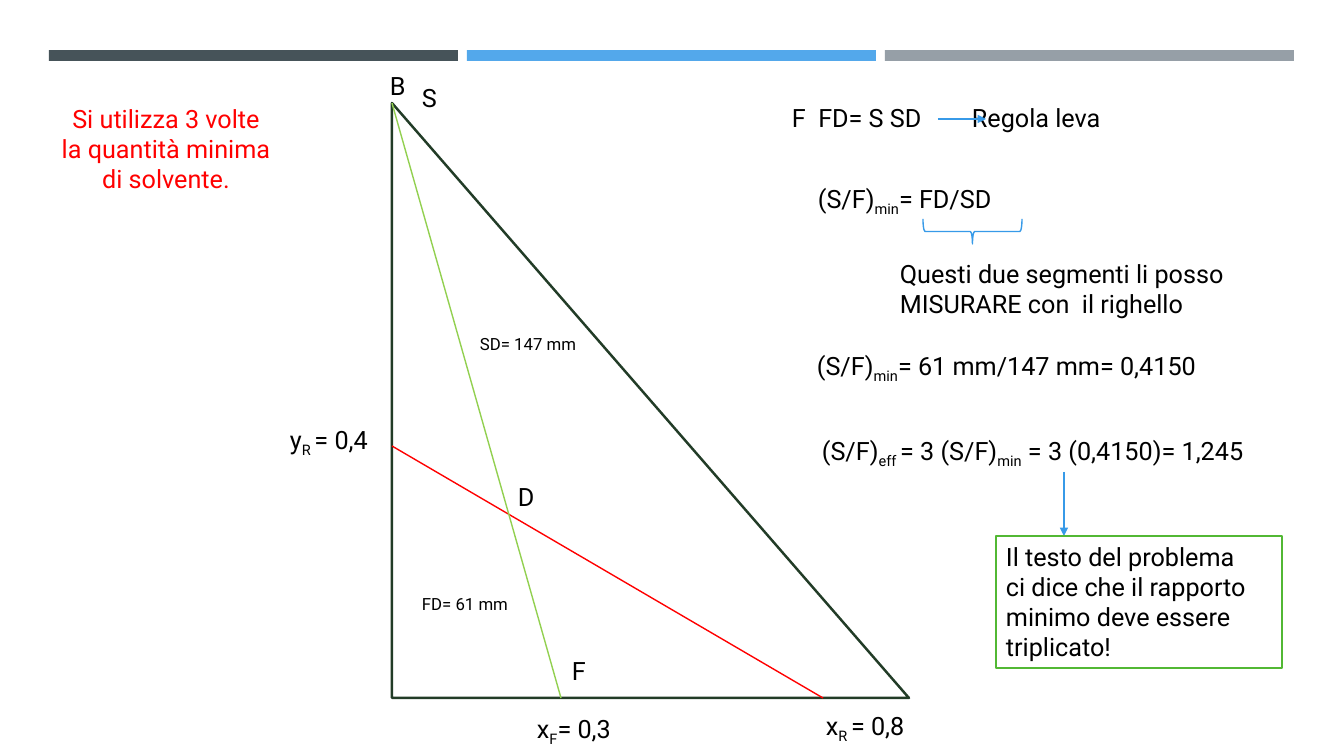
from dataclasses import dataclass

from lxml.etree import SubElement
from pptx import Presentation
from pptx.dml.color import RGBColor
from pptx.enum.shapes import MSO_CONNECTOR, MSO_SHAPE
from pptx.enum.text import MSO_ANCHOR, MSO_AUTO_SIZE, PP_ALIGN
from pptx.oxml.ns import qn
from pptx.util import Pt

SLIDE_WIDTH, SLIDE_HEIGHT = 1344, 756
EMU_PER_PX = 12192000 / SLIDE_WIDTH


@dataclass(frozen=True)
class Theme:
    font: str = "Roboto"
    text_size: int = 18
    small_size: int = 12
    thin: float = 1
    thick: float = 1.75
    black: str = "000000"
    white: str = "FFFFFF"
    red: str = "FF0000"
    blue: str = "379AE8"
    lime: str = "92D050"
    green: str = "52B834"
    dark_green: str = "223C27"
    bars: tuple = ("465359", "53A8EB", "969FA7")


def px(*lengths):
    return [round(length * EMU_PER_PX) for length in lengths]


def write(frame, text, *, font, size, color, align=PP_ALIGN.LEFT, wrap=False, tab=None):
    """Fill a frame line by line; text between a pair of ~ becomes subscript."""
    frame.word_wrap = wrap
    frame.auto_size = MSO_AUTO_SIZE.NONE
    frame.vertical_anchor = MSO_ANCHOR.TOP
    for number, line in enumerate(text.split("\n")):
        paragraph = frame.add_paragraph() if number else frame.paragraphs[0]
        paragraph.alignment = align
        if tab:
            stops = SubElement(paragraph._p.get_or_add_pPr(), qn("a:tabLst"))
            SubElement(stops, qn("a:tab"), pos=str(px(tab)[0]), algn="l")
        for part, words in enumerate(line.split("~")):
            run = paragraph.add_run()
            run.text = words
            run.font.name = font
            run.font.size = Pt(size)
            run.font.color.rgb = RGBColor.from_string(color)
            if part % 2:
                run._r.get_or_add_rPr().set("baseline", "-25000")


class Sheet:
    def __init__(self, slide, theme):
        self.slide = slide
        self.theme = theme

    def title(self, text, box, color):
        heading = self.slide.shapes.title
        heading.left, heading.top, heading.width, heading.height = px(*box)
        write(heading.text_frame, text, font=self.theme.font, size=self.theme.text_size,
              color=color, align=PP_ALIGN.CENTER, wrap=True)

    def label(self, text, box, size=None, tab=None):
        area = self.slide.shapes.add_textbox(*px(*box))
        write(area.text_frame, text, font=self.theme.font,
              size=size or self.theme.text_size, color=self.theme.black, tab=tab)

    def shape(self, kind, box, fill=None, line=None, width=1, rotation=0, text=None):
        figure = self.slide.shapes.add_shape(kind, *px(*box))
        figure.shadow.inherit = False
        figure.rotation = rotation
        if fill:
            figure.fill.solid()
            figure.fill.fore_color.rgb = RGBColor.from_string(fill)
        else:
            figure.fill.background()
        if line:
            figure.line.color.rgb = RGBColor.from_string(line)
            figure.line.width = Pt(width)
        else:
            figure.line.fill.background()
        if text:
            write(figure.text_frame, text, font=self.theme.font,
                  size=self.theme.text_size, color=self.theme.black, wrap=True)

    def line(self, start, end, color, arrow=False):
        segment = self.slide.shapes.add_connector(
            MSO_CONNECTOR.STRAIGHT, *px(*start, *end))
        segment.line.color.rgb = RGBColor.from_string(color)
        segment.line.width = Pt(self.theme.thin)
        properties = segment._element.spPr
        if arrow:
            SubElement(properties.find(qn("a:ln")), qn("a:tailEnd"), type="triangle")
        SubElement(properties, qn("a:effectLst"))


def main():
    deck = Presentation()
    deck.slide_width, deck.slide_height = px(SLIDE_WIDTH, SLIDE_HEIGHT)
    theme = Theme()
    sheet = Sheet(deck.slides.add_slide(deck.slide_layouts[5]), theme)

    # Bars across the top
    for column, color in enumerate(theme.bars):
        sheet.shape(MSO_SHAPE.RECTANGLE, (49 + 418 * column, 50, 409, 11), fill=color)

    # Statement
    sheet.title("Si utilizza 3 volte\nla quantità minima\ndi solvente.",
                (40, 98, 252, 102), theme.red)

    # Triangular diagram with its two segments
    left, top, right, bottom = 392, 103, 909, 698
    sheet.shape(MSO_SHAPE.RIGHT_TRIANGLE, (left, top, right - left, bottom - top),
                line=theme.dark_green, width=theme.thick)
    sheet.line((left, 446), (823, bottom), theme.red)
    sheet.line((left, top), (561, bottom), theme.lime)

    # Points, coordinates and formulas
    for text, x, y, width in (
        ("B", 380, 65, 37),
        ("S", 412, 77, 37),
        ("D", 508, 476, 38),
        ("F", 562, 650, 34),
        ("y~R ~= 0,4", 280, 419, 108),
        ("x~F~= 0,3", 527, 708, 101),
        ("x~R ~= 0,8", 816, 705, 106),
        ("(S/F)~min~= FD/SD", 808, 178, 211),
        ("(S/F)~min~= 61 mm/147 mm= 0,4150", 807, 345, 423),
        ("(S/F)~eff ~= 3 (S/F)~min~ = 3 (0,4150)= 1,245", 812, 430, 468),
    ):
        sheet.label(text, (x, y, width, 40))

    # Measured lengths
    sheet.label("SD= 147 mm", (470, 329, 124, 30), size=theme.small_size)
    sheet.label("FD= 61 mm", (412, 589, 112, 30), size=theme.small_size)

    # Lever rule
    sheet.label("F  FD= S SD\tRegola leva", (782, 97, 359, 40), tab=180)
    sheet.line((938, 119), (986, 119), theme.blue, arrow=True)

    # Note on the two segments
    sheet.shape(MSO_SHAPE.LEFT_BRACE, (960, 182, 25, 99), line=theme.blue,
                width=theme.thin, rotation=270)
    sheet.label("Questi due segmenti li posso\nMISURARE con  il righello",
                (890, 253, 377, 72))

    # Note on the tripled ratio
    sheet.line((1064, 472), (1064, 536), theme.blue, arrow=True)
    sheet.shape(MSO_SHAPE.RECTANGLE, (996, 536, 286, 132), fill=theme.white,
                line=theme.green, width=theme.thick,
                text="Il testo del problema\nci dice che il rapporto\n"
                     "minimo deve essere\ntriplicato!")

    deck.save("out.pptx")


if __name__ == "__main__":
    main()
